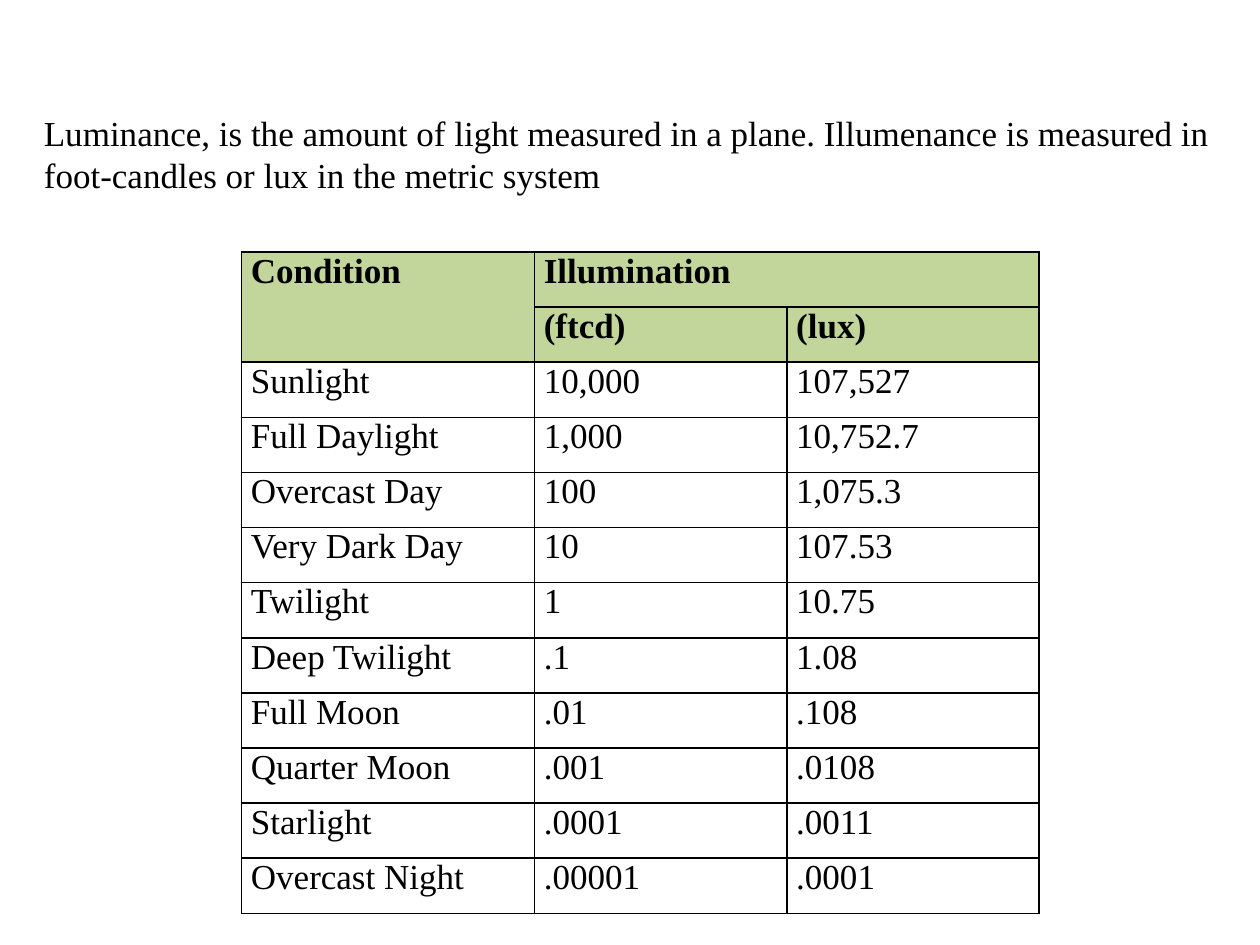
"""Build a slide that lists typical illumination levels in a table."""
from lxml import etree
from pptx import Presentation
from pptx.dml.color import RGBColor
from pptx.enum import text
from pptx.oxml import ns
from pptx.util import Pt

BLACK = RGBColor(0x00, 0x00, 0x00)
GREEN = RGBColor(0xC2, 0xD6, 0x9B)

INTRO = ("Luminance, is the amount of light measured in a plane. Illumenance is "
         "measured in foot-candles or lux in the metric system")
HEADER = [("Condition", "Illumination", ""), ("", "(ftcd)", "(lux)")]
LEVELS = [
    ("Sunlight", "10,000", "107,527"),
    ("Full Daylight", "1,000", "10,752.7"),
    ("Overcast Day", "100", "1,075.3"),
    ("Very Dark Day", "10", "107.53"),
    ("Twilight", "1", "10.75"),
    ("Deep Twilight", ".1", "1.08"),
    ("Full Moon", ".01", ".108"),
    ("Quarter Moon", ".001", ".0108"),
    ("Starlight", ".0001", ".0011"),
    ("Overcast Night", ".00001", ".0001"),
]


class Deck:
    """Hold the style and the current slide."""

    font = "Times New Roman"
    size = Pt(20)
    border = Pt(1)

    def __init__(self, width, height):
        self.prs = Presentation()
        self.prs.slide_width, self.prs.slide_height = Pt(width), Pt(height)
        self.s = self.prs.slides.add_slide(self.prs.slide_layouts[6])

    def set_text(self, tf, words, bold=False):
        p = tf.paragraphs[0]
        p.text = words
        p.font.name, p.font.size, p.font.bold = self.font, self.size, bold
        p.font.color.rgb = BLACK

    def text_box(self, words, left, top, width, height):
        tf = self.s.shapes.add_textbox(Pt(left), Pt(top), Pt(width), Pt(height)).text_frame
        tf.word_wrap = True
        tf.auto_size = text.MSO_AUTO_SIZE.SHAPE_TO_FIT_TEXT
        self.set_text(tf, words)

    def outline(self, cell):
        tcPr = cell._tc.get_or_add_tcPr()
        for side in "LRTB":
            ln = etree.SubElement(tcPr, ns.qn(f"a:ln{side}"), w=str(self.border))
            fill = etree.SubElement(ln, ns.qn("a:solidFill"))
            etree.SubElement(fill, ns.qn("a:srgbClr"), val=str(BLACK))

    def cell(self, cell, words, header):
        cell.margin_left = cell.margin_right = Pt(5.4)
        cell.margin_top = cell.margin_bottom = 0
        self.outline(cell)
        if header:
            cell.fill.solid()
            cell.fill.fore_color.rgb = GREEN
        else:
            cell.fill.background()
        self.set_text(cell.text_frame, words, header)

    def table(self, header, body, left, top, widths, row_height):
        rows = header + body
        table = self.s.shapes.add_table(
            len(rows), len(widths), Pt(left), Pt(top),
            Pt(sum(widths)), Pt(row_height * len(rows))).table
        table.first_row = table.horz_banding = False
        for column, width in zip(table.columns, widths):
            column.width = Pt(width)
        for i, row in enumerate(rows):
            table.rows[i].height = Pt(row_height)
            for j, words in enumerate(row):
                self.cell(table.cell(i, j), words, i < len(header))
        return table


def main():
    deck = Deck(720, 540)
    table = deck.table(HEADER, LEVELS, 138, 144, (167.4, 144.2, 144.2), 31.5)
    table.cell(0, 0).merge(table.cell(1, 0))
    table.cell(0, 1).merge(table.cell(0, 2))
    deck.text_box(INTRO, 18, 60, 690, 55.7)
    deck.prs.save("out.pptx")


if __name__ == "__main__":
    main()
